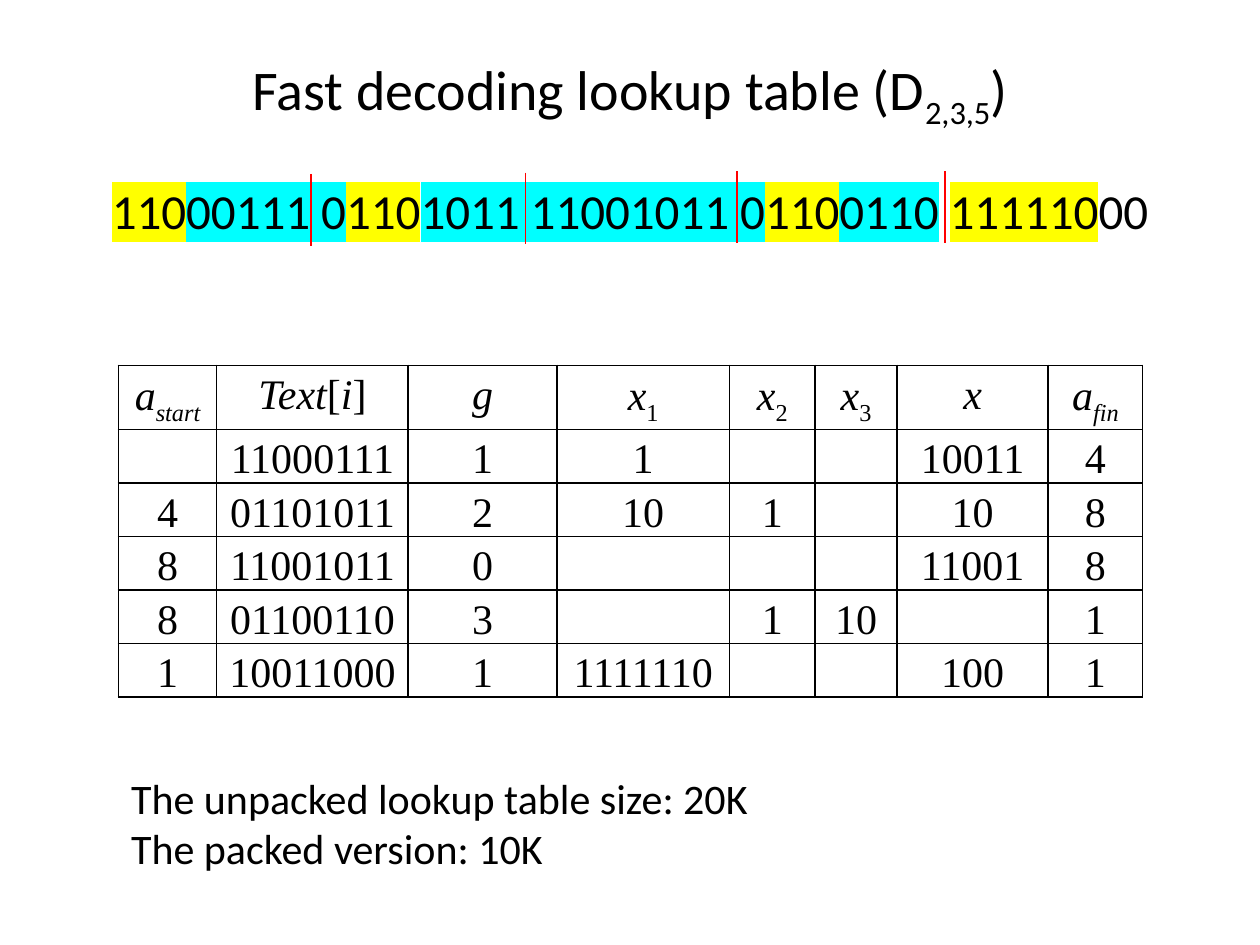
from lxml.etree import SubElement
from pptx import Presentation
from pptx.dml.color import RGBColor
from pptx.enum.shapes import MSO_CONNECTOR
from pptx.enum.text import MSO_ANCHOR, MSO_AUTO_SIZE, PP_ALIGN
from pptx.oxml import parse_xml
from pptx.oxml.ns import nsdecls, qn
from pptx.util import Inches, Pt

BLACK, RED, YELLOW, CYAN = "000000", "FF0000", "FFFF00", "00FFFF"
SANS, SERIF = "Calibri", "Times New Roman"

TITLE = [("Fast decoding lookup table (D", {}), ("2,3,5", {"sub": True}), (")", {})]
BITS = [("110", YELLOW), ("00111 0", CYAN), ("110", YELLOW), ("1011 11001011 0", CYAN),
        ("110", YELLOW), ("0110", CYAN), (" ", None), ("111110", YELLOW), ("00", None)]
BYTE_ENDS = [(2.47, 1.38), (4.17, 1.37), (5.85, 1.36), (7.5, 1.36)]
NOTES = ["The unpacked lookup table size: 20K", "The packed version: 10K"]

ITALIC, SUB = {"italic": True}, {"sub": True}
ITALIC_SUB = ITALIC | SUB
HEADER = [
    [("a", ITALIC), ("start", ITALIC_SUB)],
    [("Text", ITALIC), ("[", {}), ("i", ITALIC), ("]", {})],
    [("g", ITALIC)],
    [("x", ITALIC), ("1", SUB)],
    [("x", ITALIC), ("2", SUB)],
    [("x", ITALIC), ("3", SUB)],
    [("x", ITALIC)],
    [("a", ITALIC), ("fin", ITALIC_SUB)],
]
ROWS = [
    ["", "11000111", "1", "1", "", "", "10011", "4"],
    ["4", "01101011", "2", "10", "1", "", "10", "8"],
    ["8", "11001011", "0", "", "", "", "11001", "8"],
    ["8", "01100110", "3", "", "1", "10", "", "1"],
    ["1", "10011000", "1", "1111110", "", "", "100", "1"],
]
COLUMN_WIDTHS = [0.78, 1.52, 1.18, 1.37, 0.68, 0.65, 1.2, 0.75]
THICK_RIGHT = {1, 2}  # columns whose right edge is heavier


def color(value):
    return RGBColor.from_string(value)


def apply_format(target, values):
    for name, value in values.items():
        setattr(target, name, value)


def place(box, left, top, width, height):
    sides = dict(left=left, top=top, width=width, height=height)
    apply_format(box, {name: Inches(size) for name, size in sides.items()})


def add_span(para, text, size, name=SANS, italic=False, sub=False, highlight=None, shadow=False):
    span = para.add_run()
    span.text = text
    apply_format(span.font, {"size": Pt(size), "name": name, "italic": italic})
    span.font.color.rgb = color(BLACK)
    props = span._r.get_or_add_rPr()
    if sub:
        props.set("baseline", "-25000")
    # Effects and highlight belong right after the fill
    fill = props.find(qn("a:solidFill"))
    if highlight:
        fill.addnext(parse_xml(f'<a:highlight {nsdecls("a")}><a:srgbClr val="{highlight}"/></a:highlight>'))
    if shadow:
        fill.addnext(parse_xml(
            f'<a:effectLst {nsdecls("a")}><a:outerShdw blurRad="38100" dist="38100" dir="2700000" '
            'algn="tl"><a:srgbClr val="C0C0C0"/></a:outerShdw></a:effectLst>'))


def set_title(page):
    box = page.shapes.title
    place(box, 0.31, 0.3, 9.38, 0.87)
    apply_format(box.text_frame, {"vertical_anchor": MSO_ANCHOR.MIDDLE, "auto_size": MSO_AUTO_SIZE.NONE})
    para = box.text_frame.paragraphs[0]
    para.alignment = PP_ALIGN.CENTER
    for text, style in TITLE:
        add_span(para, text, 32, shadow=True, **style)


def add_bits(page):
    box = page.shapes.add_textbox(0, 0, 0, 0)
    place(box, 0.46, 1.38, 9.08, 0.57)
    box.text_frame.word_wrap = True
    para = box.text_frame.paragraphs[0]
    para.alignment = PP_ALIGN.CENTER
    for text, highlight in BITS:
        add_span(para, text, 28, highlight=highlight)


def add_byte_end(page, x, top, height=0.57):
    line = page.shapes.add_connector(
        MSO_CONNECTOR.STRAIGHT, Inches(x), Inches(top), Inches(x), Inches(top + height))
    line.line.color.rgb = color(RED)
    line.line.width = Pt(1)
    SubElement(line._element.spPr, qn("a:effectLst"))


def set_borders(cell, column):
    widths = {"L": 1.5 if column - 1 in THICK_RIGHT else 1,
              "R": 1.5 if column in THICK_RIGHT else 1, "T": 1, "B": 1}
    props = cell._tc.get_or_add_tcPr()
    for index, (side, width) in enumerate(widths.items()):
        props.insert(index, parse_xml(
            f'<a:ln{side} {nsdecls("a")} w="{Pt(width)}"><a:solidFill><a:srgbClr val="{BLACK}"/>'
            f'</a:solidFill></a:ln{side}>'))


def fill_cell(cell, column, spans):
    apply_format(cell, {"margin_left": Inches(0.07), "margin_right": Inches(0.07),
                        "margin_top": 0, "margin_bottom": 0})
    cell.fill.background()
    set_borders(cell, column)
    para = cell.text_frame.paragraphs[0]
    apply_format(para, {"alignment": PP_ALIGN.CENTER, "line_spacing": 1.15})
    for text, style in spans:
        add_span(para, text, 24, SERIF, **style)


def add_lookup_table(page):
    rows = [HEADER] + [[[(text, {})] if text else [] for text in row] for row in ROWS]
    frame = page.shapes.add_table(len(rows), len(HEADER), Inches(0.94), Inches(2.9),
                                  Inches(sum(COLUMN_WIDTHS)), Inches(2.63))
    table = frame.table
    apply_format(table, {"first_row": False, "horz_banding": False})
    for column, width in zip(table.columns, COLUMN_WIDTHS):
        column.width = Inches(width)
    for index, row in enumerate(rows):
        table.rows[index].height = Inches(0.42 if index else 0.51)
        for column, spans in enumerate(row):
            fill_cell(table.cell(index, column), column, spans)


def set_notes(page):
    box = page.placeholders[1]
    place(box, 0.94, 6.08, 7.54, 0.91)
    frame = box.text_frame
    apply_format(frame, {"auto_size": MSO_AUTO_SIZE.NONE, "vertical_anchor": MSO_ANCHOR.TOP})
    for index, text in enumerate(NOTES):
        para = frame.add_paragraph() if index else frame.paragraphs[0]
        apply_format(para, {"space_before": Pt(0), "alignment": PP_ALIGN.LEFT})
        props = para._p.get_or_add_pPr()
        props.set("marL", "0")
        props.set("indent", "0")
        SubElement(props, qn("a:buNone"))
        add_span(para, text, 24)


def main():
    deck = Presentation()
    apply_format(deck, {"slide_width": Inches(10), "slide_height": Inches(7.5)})
    page = deck.slides.add_slide(deck.slide_layouts[1])
    add_lookup_table(page)
    set_title(page)
    add_bits(page)
    for x, top in BYTE_ENDS:
        add_byte_end(page, x, top)
    set_notes(page)
    deck.save("out.pptx")


if __name__ == "__main__":
    main()
